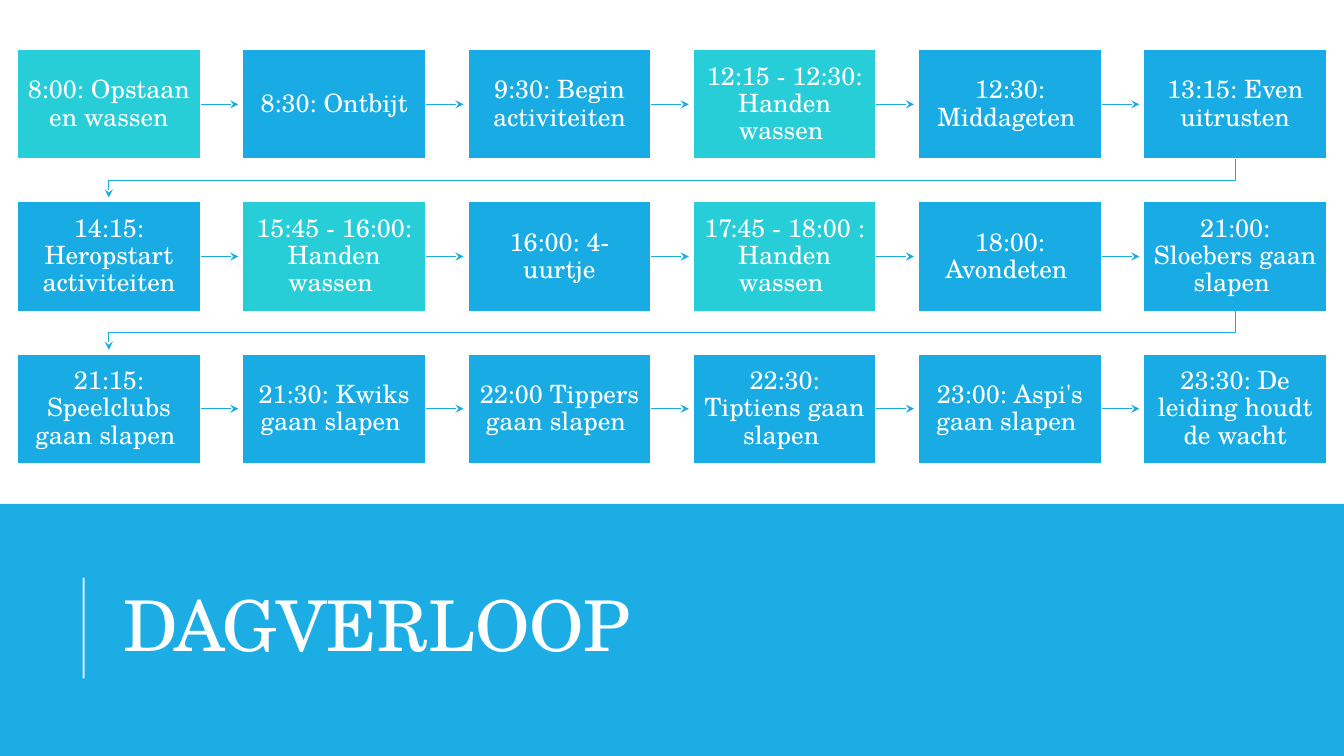
from lxml import etree
from pptx import Presentation
from pptx import util as u
from pptx.dml import color
from pptx.enum import shapes, text
from pptx.oxml import ns

COLORS = {"band": "1CADE4", "step": "19ACE4", "washing": "27CED7", "white": "FFFFFF"}
FONT = "TeX Gyre Schola"
SCHEDULE = [
    ["8:00: Opstaan en wassen", "8:30: Ontbijt", "9:30: Begin activiteiten",
     "12:15 - 12:30: Handen wassen ", "12:30: Middageten ", "13:15: Even uitrusten"],
    ["14:15: Heropstart activiteiten", "15:45 - 16:00: Handen wassen ", "16:00: 4-uurtje",
     "17:45 - 18:00 : Handen wassen ", "18:00: Avondeten ", "21:00: Sloebers gaan slapen "],
    ["21:15: Speelclubs gaan slapen ", "21:30: Kwiks gaan slapen ", "22:00 Tippers gaan slapen ",
     "22:30: Tiptiens gaan slapen ", "23:00: Aspi's gaan slapen ",
     "23:30: De leiding houdt de wacht"],
]
LEFT, TOP = 0.17, 0.49
WIDTH, HEIGHT = 1.82, 1.09
COLUMN_PITCH = (11.34 - LEFT) / 5
ROW_PITCH = 1.51
ARROW_GAP = 0.04


def rgb(name):
    """Return the named colour."""
    return color.RGBColor.from_string(COLORS[name])


def write(shape, words, size=18, align=text.PP_ALIGN.CENTER, spacing=0.9, inset=(0.09, 0.09)):
    """Write formatted text in a shape, vertically centred."""
    frame = shape.text_frame
    frame.text = words
    frame.word_wrap = True
    frame.auto_size = text.MSO_AUTO_SIZE.NONE
    frame.vertical_anchor = text.MSO_ANCHOR.MIDDLE
    frame.margin_left = frame.margin_right = u.Inches(inset[0])
    frame.margin_top = frame.margin_bottom = u.Inches(inset[1])
    paragraph = frame.paragraphs[0]
    paragraph.alignment = align
    paragraph.line_spacing = spacing
    font = paragraph.runs[0].font
    font.name, font.size = FONT, u.Pt(size)
    font.color.rgb = rgb("white")


def add_block(slide, left, top, width, height, fill, outline=None):
    """Add a filled rectangle, with a white outline if a width is given."""
    block = slide.shapes.add_shape(
        shapes.MSO_SHAPE.RECTANGLE, *map(u.Inches, (left, top, width, height)))
    block.shadow.inherit = False
    block.fill.solid()
    block.fill.fore_color.rgb = rgb(fill)
    if outline:
        block.line.color.rgb = rgb("white")
        block.line.width = u.Pt(outline)
    else:
        block.line.fill.background()
    return block


def style_arrow(arrow):
    """Give a line the arrow colour, width and stealth head."""
    arrow.line.color.rgb = rgb("step")
    arrow.line.width = u.Pt(0.75)
    etree.SubElement(arrow.line._get_or_add_ln(), ns.qn("a:tailEnd"), type="stealth")


def add_straight(slide, start, end):
    """Add a straight connector without a shadow."""
    line = slide.shapes.add_connector(
        shapes.MSO_CONNECTOR.STRAIGHT, *map(u.Inches, (*start, *end)))
    line.line.width = u.Pt(1.5)
    etree.SubElement(line._element.spPr, ns.qn("a:effectLst"))
    return line


def add_step_arrow(slide, step, left, top):
    """Add an arrow from a step towards the next one in its row."""
    middle = top + HEIGHT / 2
    arrow = add_straight(slide, (left + WIDTH, middle),
                         (left + COLUMN_PITCH - ARROW_GAP, middle))
    arrow.begin_connect(step, 3)
    style_arrow(arrow)


def add_row_arrow(slide, left, top):
    """Add a bent arrow from the last step of a row to the next row."""
    start_x, end_x = left + WIDTH / 2, LEFT + WIDTH / 2
    bottom, next_top = top + HEIGHT, top + ROW_PITCH
    bend = (bottom + next_top) / 2
    points = [(start_x, bend), (end_x, bend), (end_x, next_top - ARROW_GAP)]
    builder = slide.shapes.build_freeform(u.Inches(start_x), u.Inches(bottom))
    builder.add_line_segments(
        [(u.Inches(x), u.Inches(y)) for x, y in points], close=False)
    arrow = builder.convert_to_shape()
    arrow.fill.background()
    arrow.shadow.inherit = False
    style_arrow(arrow)


def add_schedule(slide):
    """Add the rows of steps and the arrows between them."""
    for row, steps in enumerate(SCHEDULE):
        top = TOP + row * ROW_PITCH
        for column, words in enumerate(steps):
            left = LEFT + column * COLUMN_PITCH
            fill = "washing" if "wassen" in words else "step"
            step = add_block(slide, left, top, WIDTH, HEIGHT, fill, outline=1.25)
            write(step, words)
            if column < len(steps) - 1:
                add_step_arrow(slide, step, left, top)
            elif row < len(SCHEDULE) - 1:
                add_row_arrow(slide, left, top)


def add_heading(slide):
    """Add the band with the title and its upright rule."""
    title = slide.shapes.title
    title.left, title.top = u.Inches(1.12), u.Inches(5.44)
    title.width, title.height = u.Inches(10.63), u.Inches(1.64)
    write(title, "DAGVERLOOP", size=50, align=text.PP_ALIGN.LEFT, spacing=0.8,
          inset=(0.1, 0.05))
    band = add_block(slide, 0, 5, 13.33, 2.5, "band")
    title._element.addprevious(band._element)
    rule = add_straight(slide, (0.83, 6.73), (0.83, 5.73))
    rule.line.color.rgb = rgb("white")
    tint = rule._element.spPr.find(".//" + ns.qn("a:srgbClr"))
    etree.SubElement(tint, ns.qn("a:alpha"), val="80000")


def main():
    """Build and save the day schedule slide."""
    deck = Presentation()
    deck.slide_width, deck.slide_height = u.Inches(13.33), u.Inches(7.5)
    slide = deck.slides.add_slide(deck.slide_layouts[5])
    add_heading(slide)
    add_schedule(slide)
    deck.save("out.pptx")


if __name__ == "__main__":
    main()
